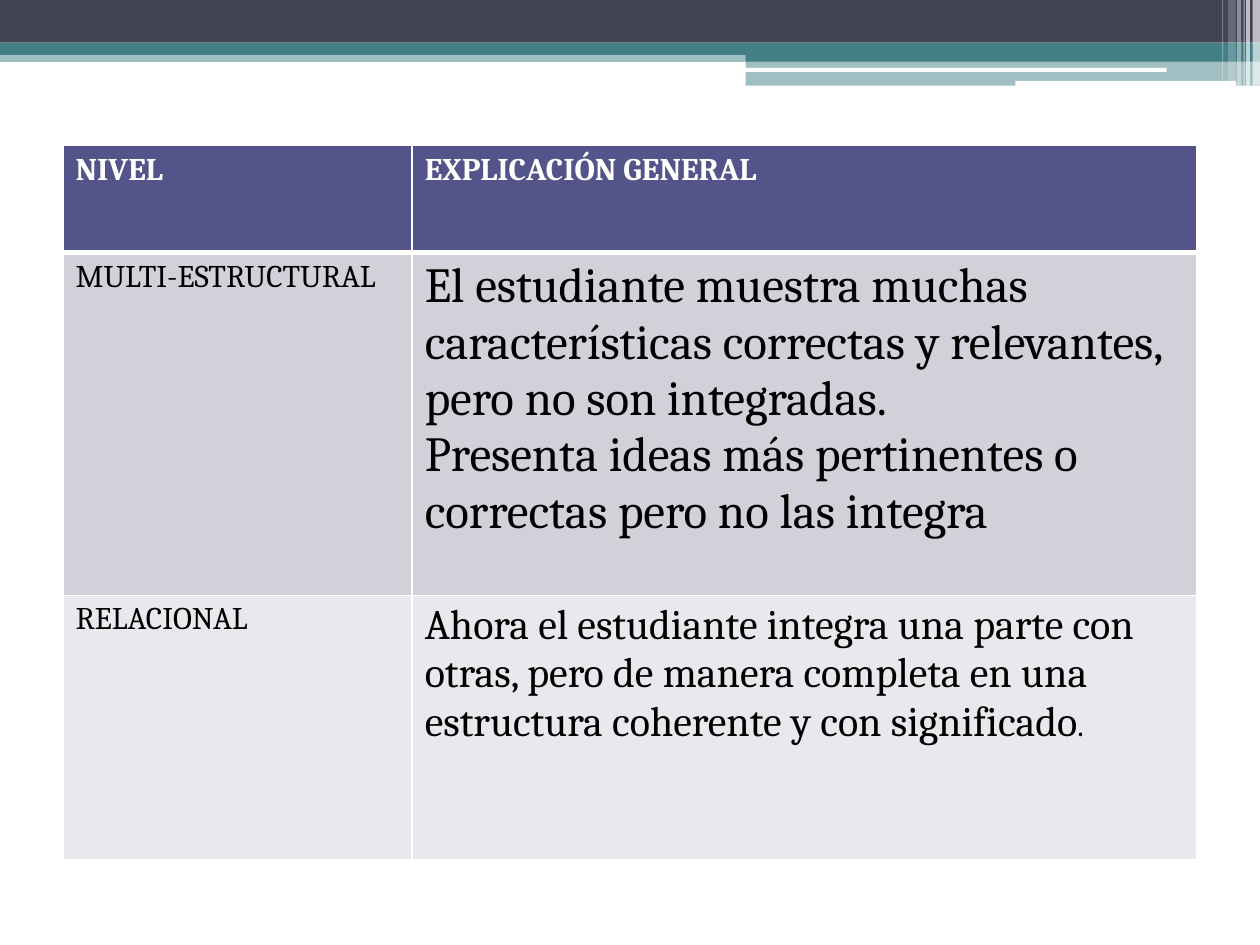
from lxml.etree import SubElement
from pptx import Presentation
from pptx.dml.color import RGBColor
from pptx.enum.shapes import MSO_SHAPE
from pptx.oxml.ns import qn
from pptx.util import Cm, Pt

FONT = "Cambria"
NAVY, TEAL, WHITE, BLACK = "424456", "438086", "FFFFFF", "000000"
HEADER_FILL = "53548A"
ROW_FILLS = ["D1D1DA", "E9E9ED"]

# Each cell is a list of paragraphs, each paragraph a list of (text, size) runs
HEADER = [[[("NIVEL", 18)]], [[("EXPLICACIÓN GENERAL", 18)]]]
LEVELS = [
    [
        [[("MULTI-ESTRUCTURAL", 18)]],
        [
            [("El estudiante muestra muchas características correctas y "
              "relevantes, pero no son integradas.", 28)],
            [("Presenta ideas más pertinentes o correctas pero no las integra", 28)],
        ],
    ],
    [
        [[("RELACIONAL", 18)]],
        [[("Ahora el estudiante integra una parte con otras, pero de manera "
           "completa en una estructura coherente y con significado", 24), (".", 18)]],
    ],
]


def color(value):
    return RGBColor.from_string(value)


def add_bar(slide, left, top, width, height, fill, opacity=100,
            kind=MSO_SHAPE.RECTANGLE):
    shape = slide.shapes.add_shape(kind, Cm(left), Cm(top), Cm(width), Cm(height))
    shape.shadow.inherit = False
    shape.line.fill.background()
    shape.fill.solid()
    shape.fill.fore_color.rgb = color(fill)
    if opacity < 100:
        fill_color = shape._element.spPr.find(qn("a:solidFill"))[0]
        SubElement(fill_color, qn("a:alpha"), val=str(opacity * 1000))


def add_banner(slide, left, top, width):
    # Full-width bands
    for offset, height, fill, opacity in [
        (1.02, 0.23, TEAL, 50), (0, 0.86, NAVY, 100), (0.86, 0.25, TEAL, 100),
    ]:
        add_bar(slide, left, top + offset, width, height, fill, opacity)

    # Step on the right
    step = 15.03
    for offset, height, opacity in [(0.99, 0.25, 100), (1.22, 0.51, 50)]:
        add_bar(slide, left + step, top + offset, width - step, height, TEAL, opacity)

    # White rounded strips across the step
    for x, y, length, height in [(15.01, 1.37, 8.51, 0.08), (20.47, 1.63, 4.45, 0.1)]:
        add_bar(slide, left + x, top + y, length, height, WHITE,
                kind=MSO_SHAPE.ROUNDED_RECTANGLE)

    # Translucent vertical stripes, placed from the right edge
    for inset, stripe, height, opacity in [
        (0.15, 0.15, 1.73, 65), (0.28, 0.08, 1.73, 65), (0.33, 0.02, 1.73, 60),
        (0.46, 0.08, 1.73, 40), (0.64, 0.15, 1.63, 20), (0.76, 0.02, 1.63, 30),
    ]:
        add_bar(slide, left + width - inset, top, stripe, height, WHITE, opacity)


def set_borders(cell, top, bottom):
    properties = cell._tc.get_or_add_tcPr()
    for tag, points in [("lnL", 1), ("lnR", 1), ("lnT", top), ("lnB", bottom)]:
        line = SubElement(properties, qn(f"a:{tag}"), w=str(Pt(points)))
        SubElement(SubElement(line, qn("a:solidFill")), qn("a:srgbClr"), val=WHITE)


def fill_cell(cell, paragraphs, fill, text_color, bold):
    cell.fill.solid()
    cell.fill.fore_color.rgb = color(fill)
    text_frame = cell.text_frame
    for index, runs in enumerate(paragraphs):
        paragraph = text_frame.add_paragraph() if index else text_frame.paragraphs[0]
        for text, size in runs:
            run = paragraph.add_run()
            run.text = text
            run.font.name = FONT
            run.font.size = Pt(size)
            run.font.bold = bold
            run.font.color.rgb = color(text_color)


def add_level_table(slide, left, top, width, height):
    rows = [HEADER] + LEVELS
    table = slide.shapes.add_table(
        len(rows), len(HEADER), Cm(left), Cm(top), Cm(width), Cm(height)).table
    first_column, header_height, first_level_height = 7.04, 2.16, 6.91
    widths = [first_column, width - first_column]
    heights = [header_height, first_level_height,
               height - header_height - first_level_height]
    for column, size in zip(table.columns, widths):
        column.width = Cm(size)

    for index, (row, size, contents) in enumerate(zip(table.rows, heights, rows)):
        row.height = Cm(size)
        is_header = index == 0
        fill = HEADER_FILL if is_header else ROW_FILLS[index - 1]
        for cell, paragraphs in zip(row.cells, contents):
            # Thick rule between the header and the levels
            set_borders(cell, top=3 if index == 1 else 1, bottom=3 if is_header else 1)
            fill_cell(cell, paragraphs, fill, WHITE if is_header else BLACK, is_header)


def main():
    presentation = Presentation()
    presentation.slide_width = Cm(25.4)
    presentation.slide_height = Cm(19.05)
    slide = presentation.slides.add_slide(presentation.slide_layouts[6])
    add_banner(slide, 0, 0, 25.4)
    add_level_table(slide, 1.27, 2.93, 22.86, 14.4)
    presentation.save("out.pptx")


if __name__ == "__main__":
    main()
